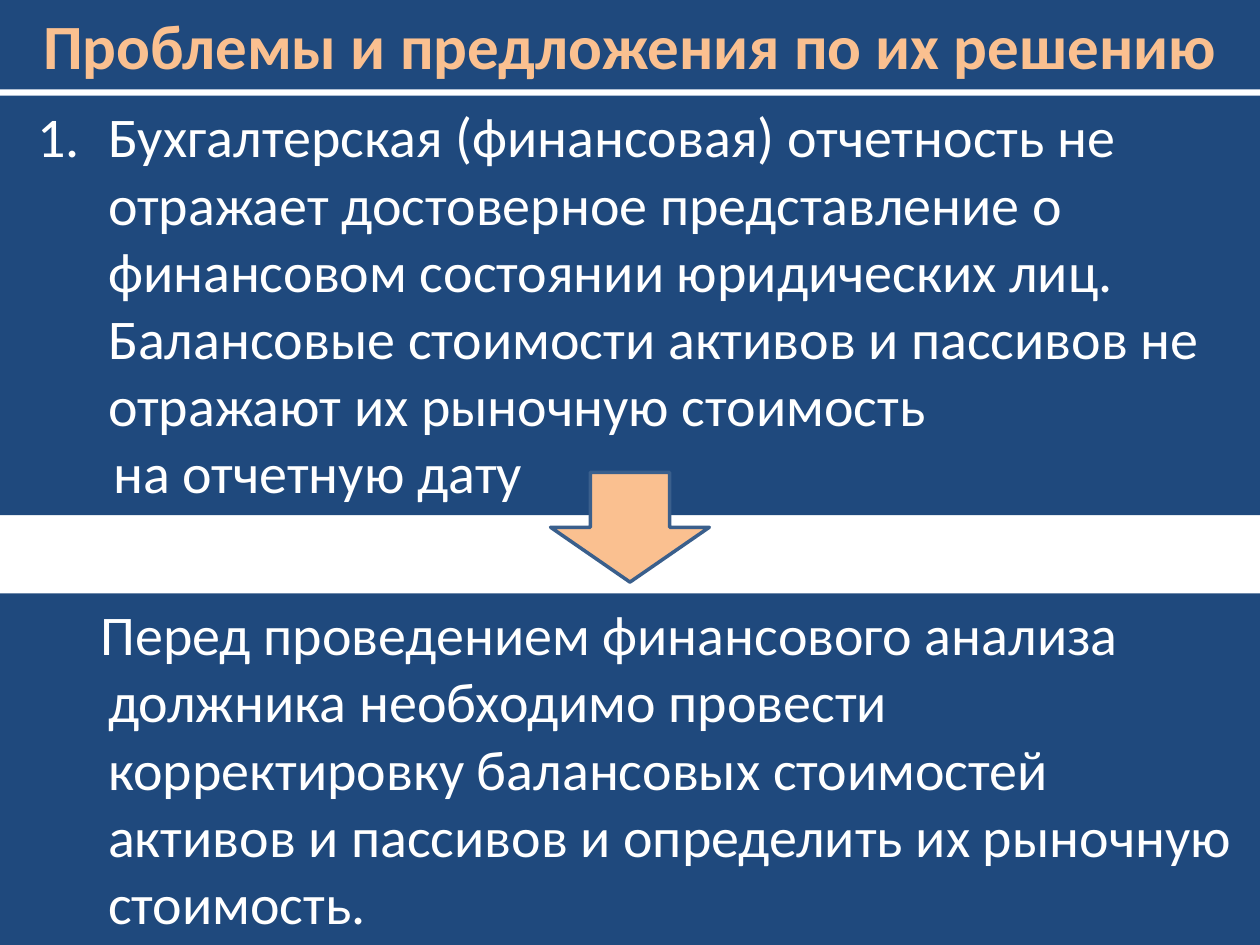
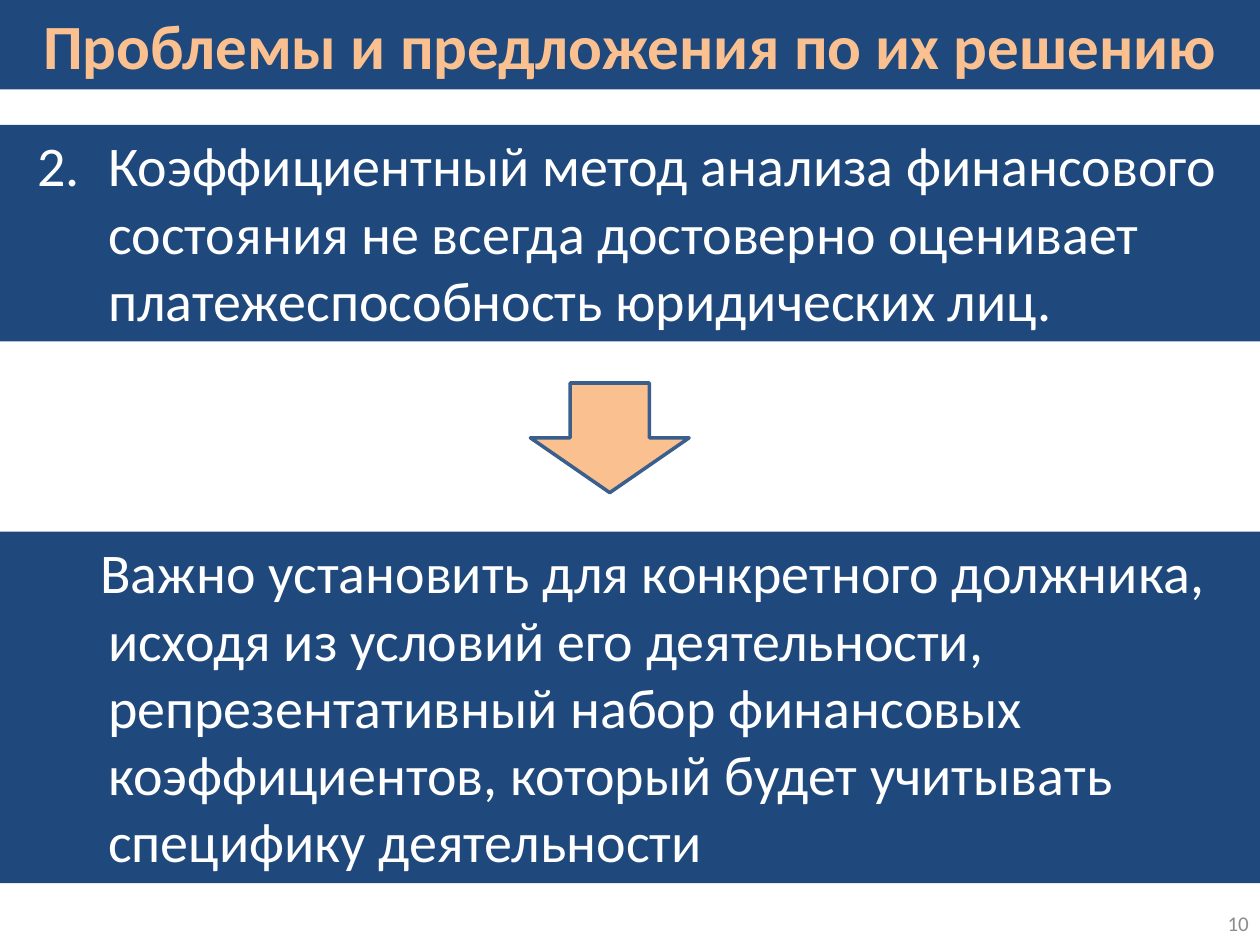
from pptx import Presentation
from pptx.dml.color import RGBColor
from pptx.enum.shapes import MSO_SHAPE
from pptx.enum.text import MSO_ANCHOR, MSO_AUTO_SIZE, PP_ALIGN
from pptx.util import Inches, Pt
from lxml import etree

RECT, DOWN_ARROW = MSO_SHAPE.RECTANGLE, MSO_SHAPE.DOWN_ARROW
TOP, MIDDLE = MSO_ANCHOR.TOP, MSO_ANCHOR.MIDDLE
LEFT, CENTER, RIGHT = PP_ALIGN.LEFT, PP_ALIGN.CENTER, PP_ALIGN.RIGHT
GROW = MSO_AUTO_SIZE.SHAPE_TO_FIT_TEXT

COLORS = {"band": "1F497D", "accent": "FAC090", "text": "FFFFFF",
          "outline": "3A5F8C", "number": "8C8C8C"}
FONT = "Calibri"
WIDTH, HEIGHT = 10, 7.5
TITLE_HEIGHT = 0.71
ARROW_SIZE = (1.26, 0.87)
HANGING, NUMBER_INDENT, SOLUTION_INDENT, TAIL_INDENT = 0.76, -0.56, -0.06, 0.04
TITLE = "Проблемы и предложения по их решению"

SLIDES = [
    {"number": 1,
     "problem": ["Бухгалтерская (финансовая) отчетность не отражает достоверное "
                 "представление о финансовом состоянии юридических лиц. Балансовые "
                 "стоимости активов и пассивов не отражают их рыночную стоимость",
                 "на отчетную дату"],
     "problem_band": (0.76, 3.33),
     "solution": "Перед проведением финансового анализа должника необходимо провести "
                 "корректировку балансовых стоимостей активов и пассивов и определить "
                 "их рыночную стоимость.",
     "solution_band": (4.71, 2.79),
     "arrow": (4.37, 3.75),
     "page": None},
    {"number": 2,
     "problem": ["Коэффициентный метод анализа финансового состояния не всегда "
                 "достоверно оценивает платежеспособность юридических лиц."],
     "problem_band": (0.99, 1.72),
     "solution": "Важно установить для конкретного должника, исходя из условий его "
                 "деятельности, репрезентативный набор финансовых коэффициентов, "
                 "который будет учитывать специфику деятельности",
     "solution_band": (4.22, 2.79),
     "arrow": (4.21, 3.04),
     "page": "10"},
]


def rgb(name):
    return RGBColor.from_string(COLORS[name])


def add_run(p, text, size, color, bold=False):
    r = p.add_run()
    r.text = text
    r.font.name, r.font.size, r.font.bold = FONT, Pt(size), bold
    r.font.color.rgb = rgb(color)


def indent(p, first, number=None):
    pPr = p._p.get_or_add_pPr()
    pPr.set("marL", str(Inches(HANGING)))
    pPr.set("indent", str(Inches(first)))
    if number:
        ns = pPr.nsmap["a"]
        font = etree.SubElement(pPr, f"{{{ns}}}buFont")
        font.set("typeface", FONT)
        bullet = etree.SubElement(pPr, f"{{{ns}}}buAutoNum")
        bullet.set("type", "arabicPeriod")
        bullet.set("startAt", str(number))


def add_filled(s, kind, box, color):
    sp = s.shapes.add_shape(kind, *map(Inches, box))
    sp.shadow.inherit = False
    sp.fill.solid()
    sp.fill.fore_color.rgb = rgb(color)
    sp.line.fill.background()
    return sp


def add_band(s, top, height):
    tf = add_filled(s, RECT, (0, top, WIDTH, height), "band").text_frame
    tf.word_wrap = True
    tf.auto_size = GROW
    tf.vertical_anchor = TOP
    return tf


def add_title(s):
    p = add_band(s, 0, TITLE_HEIGHT).paragraphs[0]
    p.alignment = CENTER
    add_run(p, TITLE, 36, "accent", bold=True)


def add_body(s, band, paragraphs):
    tf = add_band(s, *band)
    for i, (text, first, number) in enumerate(paragraphs):
        p = tf.add_paragraph() if i else tf.paragraphs[0]
        p.alignment = LEFT
        indent(p, first, number)
        add_run(p, text, 32, "text")


def add_arrow(s, position):
    sp = add_filled(s, DOWN_ARROW, position + ARROW_SIZE, "accent")
    sp.line.color.rgb = rgb("outline")
    sp.line.width = Pt(2)


def add_page_number(s, page):
    tf = s.shapes.add_textbox(*map(Inches, (7.68, 7.13, 2.33, 0.4))).text_frame
    tf.word_wrap = True
    tf.vertical_anchor = MIDDLE
    p = tf.paragraphs[0]
    p.alignment = RIGHT
    add_run(p, page, 12, "number")


def build_slide(prs, content):
    s = prs.slides.add_slide(prs.slide_layouts[6])
    if content["page"]:
        add_page_number(s, content["page"])
    add_title(s)
    head, *tail = content["problem"]
    problem = [(head, NUMBER_INDENT, content["number"])]
    problem += [(text, TAIL_INDENT, None) for text in tail]
    add_body(s, content["problem_band"], problem)
    add_body(s, content["solution_band"], [(content["solution"], SOLUTION_INDENT, None)])
    add_arrow(s, content["arrow"])


def main():
    prs = Presentation()
    prs.slide_width, prs.slide_height = Inches(WIDTH), Inches(HEIGHT)
    for content in SLIDES:
        build_slide(prs, content)
    prs.save("out.pptx")


if __name__ == "__main__":
    main()
